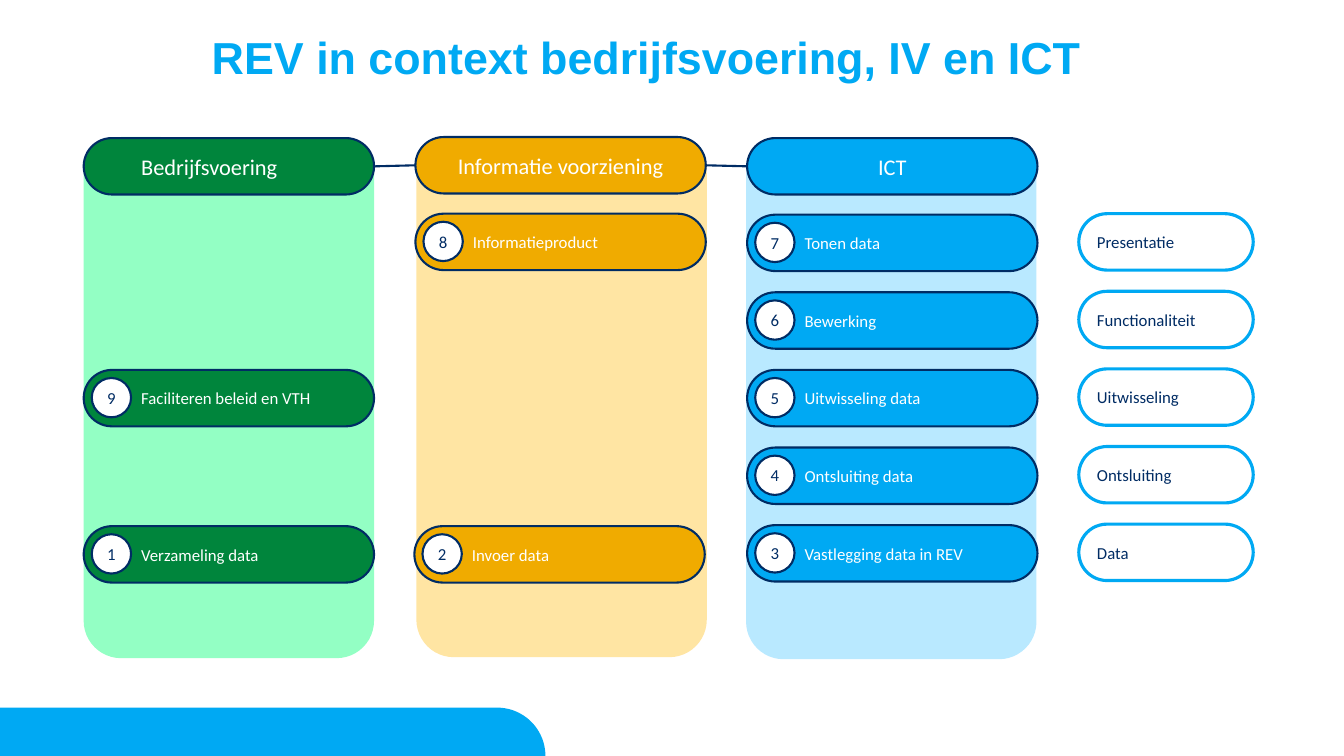
import math
from lxml import etree
from pptx import Presentation
from pptx.dml.color import RGBColor
from pptx.enum import shapes, text
from pptx.oxml import ns
from pptx.util import Inches, Pt

WHITE = RGBColor(0xFF, 0xFF, 0xFF)
NAVY = RGBColor(0x00, 0x2C, 0x64)
BLUE = RGBColor(0x00, 0xA9, 0xF3)
PALE_BLUE = RGBColor(0xB9, 0xE9, 0xFF)
GREEN = RGBColor(0x00, 0x85, 0x3C)
PALE_GREEN = RGBColor(0x93, 0xFF, 0xC4)
AMBER = RGBColor(0xF0, 0xAB, 0x00)
PALE_AMBER = RGBColor(0xFF, 0xE5, 0xA3)

COLUMN_WIDTH = 2.88
PILL_HEIGHT = 0.56
BADGE_SIZE = 0.39
LEFT, CENTER = text.PP_ALIGN.LEFT, text.PP_ALIGN.CENTER
PILL, CIRCLE = shapes.MSO_SHAPE.ROUNDED_RECTANGLE, shapes.MSO_SHAPE.OVAL

COLUMNS = [
    (0.83, 1.36, 0.83, 1.37, GREEN, PALE_GREEN, "Bedrijfsvoering", LEFT, 2.12, 0.775,
     [(2, 0.83, "9", "Faciliteren beleid en VTH"), (4, 0.83, "1", "Verzameling data")]),
    (4.13, 1.35, 4.12, 1.36, AMBER, PALE_AMBER, "Informatie voorziening", CENTER, 2.12, 0.775,
     [(0, 4.12, "8", "Informatieproduct"), (4, 4.11, "2", "Invoer data")]),
    (7.4, 1.37, 7.41, 1.37, BLUE, PALE_BLUE, "ICT", CENTER, 2.13, 0.77,
     [(0, 7.41, "7", "Tonen data"), (1, 7.41, "6", "Bewerking"),
      (2, 7.41, "5", "Uitwisseling data"), (3, 7.41, "4", "Ontsluiting data"),
      (4, 7.41, "3", "Vastlegging data in REV")]),
]
LAYERS = ["Presentatie", "Functionaliteit", "Uitwisseling", "Ontsluiting", "Data"]


def add_box(slide, kind, left, top, width, height, fill, line=None, weight=1.5):
    box = slide.shapes.add_shape(kind, Inches(left), Inches(top), Inches(width), Inches(height))
    box.shadow.inherit = False
    if fill is None:
        box.fill.background()
    else:
        box.fill.solid()
        box.fill.fore_color.rgb = fill
    if line is None:
        box.line.fill.background()
    else:
        box.line.color.rgb = line
        box.line.width = Pt(weight)
    return box


def write(box, words, size, color, align, indent=0):
    frame = box.text_frame
    frame.vertical_anchor = text.MSO_ANCHOR.MIDDLE
    paragraph = frame.paragraphs[0]
    paragraph.text = words
    paragraph.alignment = align
    if indent:
        paragraph._p.get_or_add_pPr().set("marL", str(Inches(indent)))
    paragraph.font.name = "Calibri"
    paragraph.font.size = Pt(size)
    paragraph.font.color.rgb = color


def add_pill(slide, left, top, width, fill, line, weight=1.5):
    pill = add_box(slide, PILL, left, top, width, PILL_HEIGHT, fill, line, weight)
    pill.adjustments[0] = 0.5
    return pill


def add_step(slide, left, top, fill, number, label):
    pill = add_pill(slide, left, top, COLUMN_WIDTH, fill, NAVY)
    write(pill, label, 12, WHITE, LEFT, BADGE_SIZE)
    badge = add_box(slide, CIRCLE, left + 0.08, top + 0.08, BADGE_SIZE, BADGE_SIZE, WHITE, NAVY)
    frame = badge.text_frame
    frame.margin_left = frame.margin_right = frame.margin_top = frame.margin_bottom = 0
    write(badge, number, 12, NAVY, CENTER)


def add_column(slide, left, top, head_left, head_top, color, pale, name, align,
               first_row, pitch, steps):
    panel = add_box(slide, PILL, left, top, COLUMN_WIDTH, 5.17, pale)
    panel.adjustments[0] = 0.129
    heading = add_pill(slide, head_left, head_top, COLUMN_WIDTH, color, NAVY)
    write(heading, name, 16, WHITE, align, BADGE_SIZE if align == LEFT else 0)
    for row, step_left, number, label in steps:
        add_step(slide, step_left, first_row + row * pitch, color, number, label)


def add_layers(slide, left, top, width, pitch):
    for row, layer in enumerate(LAYERS):
        pill = add_pill(slide, left, top + row * pitch, width, None, BLUE, 2.25)
        write(pill, layer, 12, NAVY, LEFT)


def add_link(slide, x1, y1, x2, y2):
    link = slide.shapes.add_connector(
        shapes.MSO_CONNECTOR.STRAIGHT, Inches(x1), Inches(y1), Inches(x2), Inches(y2))
    link.line.color.rgb = NAVY
    link.line.width = Pt(1.5)
    etree.SubElement(link._element.spPr, ns.qn("a:effectLst"))


def add_footer(slide, left, top, width, height):
    right, bottom = left + width, top + height
    angles = [math.radians(degree) for degree in range(90, -1, -3)]
    curve = [(right - height + height * math.cos(angle), bottom - height * math.sin(angle))
             for angle in angles]
    outline = slide.shapes.build_freeform(Inches(left), Inches(top))
    outline.add_line_segments(
        [(Inches(x), Inches(y)) for x, y in curve + [(left, bottom)]], close=True)
    band = outline.convert_to_shape()
    band.shadow.inherit = False
    band.fill.solid()
    band.fill.fore_color.rgb = BLUE
    band.line.fill.background()


def add_title(slide, left, top, width, height):
    title = slide.shapes.title
    title.left, title.top = Inches(left), Inches(top)
    title.width, title.height = Inches(width), Inches(height)
    frame = title.text_frame
    frame.auto_size = text.MSO_AUTO_SIZE.NONE
    frame.vertical_anchor = text.MSO_ANCHOR.TOP
    paragraph = frame.paragraphs[0]
    paragraph.text = "REV in context bedrijfsvoering, IV en ICT"
    paragraph.alignment = LEFT
    paragraph.line_spacing = 0.9
    paragraph.font.name = "Arial"
    paragraph.font.size = Pt(32)
    paragraph.font.bold = True
    paragraph.font.color.rgb = BLUE


def main():
    deck = Presentation()
    deck.slide_width, deck.slide_height = Inches(13.33), Inches(7.5)
    slide = deck.slides.add_slide(deck.slide_layouts[5])
    add_title(slide, 2, 0.3, 10.97, 0.79)
    add_footer(slide, 0, 7.02, 5.41, 0.48)
    for column in COLUMNS:
        add_column(slide, *column)
    add_layers(slide, 10.7, 2.12, 1.73, 0.77)
    add_link(slide, 3.72, 1.65, 4.12, 1.64)
    add_link(slide, 7, 1.64, 7.41, 1.65)
    deck.save("out.pptx")


if __name__ == "__main__":
    main()
